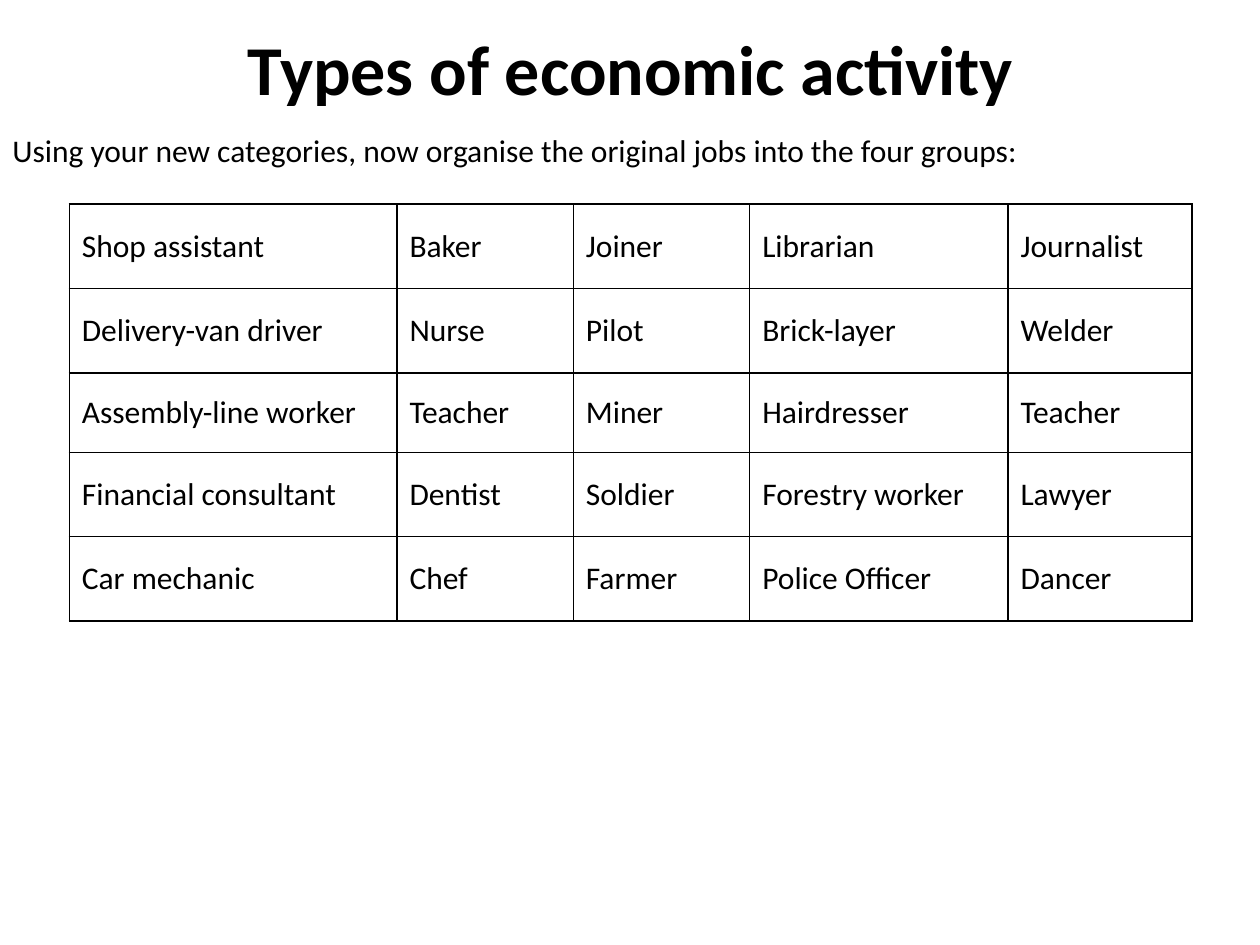
from dataclasses import dataclass

from lxml.etree import SubElement
from pptx import Presentation
from pptx.dml.color import RGBColor
from pptx.enum.text import MSO_ANCHOR, PP_ALIGN
from pptx.oxml.ns import qn
from pptx.util import Inches, Pt

FONT = "Calibri"
COLORS = {"page": "FFFFFF", "ink": "000000"}

WIDTHS = [2.6, 1.4, 1.4, 2.05, 1.46]
HEIGHTS = [0.67, 0.67, 0.63, 0.67, 0.67]
JOBS = [
    ["Shop assistant", "Baker", "Joiner", "Librarian", "Journalist"],
    ["Delivery-van driver", "Nurse", "Pilot", "Brick-layer", "Welder"],
    ["Assembly-line worker", "Teacher", "Miner", "Hairdresser", "Teacher"],
    ["Financial consultant", "Dentist", "Soldier", "Forestry worker", "Lawyer"],
    ["Car mechanic", "Chef", "Farmer", "Police Officer", "Dancer"],
]


@dataclass
class Label:
    text: str
    left: float
    top: float
    width: float
    height: float
    size: int = 18
    bold: bool = False
    align: PP_ALIGN = PP_ALIGN.LEFT
    anchor: MSO_ANCHOR = MSO_ANCHOR.TOP


LABELS = [
    Label("Types of economic activity", 0.2, 0.16, 9.61, 0.75, 40, True,
          PP_ALIGN.CENTER, MSO_ANCHOR.MIDDLE),
    Label("Using your new categories, now organise the original jobs "
          "into the four groups:", 0, 0.99, 10, 0.4),
]


def write(frame, text: str, size: int = 18, bold: bool = False) -> None:
    frame.text = text
    font = frame.paragraphs[0].font
    font.name, font.size, font.bold = FONT, Pt(size), bold
    font.color.rgb = RGBColor.from_string(COLORS["ink"])


def add_label(slide, label: Label) -> None:
    box = slide.shapes.add_textbox(Inches(label.left), Inches(label.top),
                                   Inches(label.width), Inches(label.height))
    frame = box.text_frame
    frame.word_wrap = True
    frame.vertical_anchor = label.anchor
    write(frame, label.text, label.size, label.bold)
    frame.paragraphs[0].alignment = label.align
    if label.bold:
        frame.margin_left = frame.margin_right = Inches(0.04)
        frame.margin_top = frame.margin_bottom = Inches(0.04)


def add_border(cell) -> None:
    props = cell._tc.get_or_add_tcPr()
    for side in ("a:lnL", "a:lnR", "a:lnT", "a:lnB"):
        line = SubElement(props, qn(side), w=str(Pt(1)))
        fill = SubElement(line, qn("a:solidFill"))
        SubElement(fill, qn("a:srgbClr"), val=COLORS["ink"])


def add_jobs(slide, left: float, top: float) -> None:
    table = slide.shapes.add_table(
        len(HEIGHTS), len(WIDTHS), Inches(left), Inches(top),
        Inches(sum(WIDTHS)), Inches(sum(HEIGHTS))).table
    table.first_row = table.horz_banding = False
    for col, width in zip(table.columns, WIDTHS):
        col.width = Inches(width)
    for row, height, names in zip(table.rows, HEIGHTS, JOBS):
        row.height = Inches(height)
        for cell, name in zip(row.cells, names):
            write(cell.text_frame, name)
            cell.vertical_anchor = MSO_ANCHOR.MIDDLE
            # Borders must stand before the fill in the cell's XML
            add_border(cell)
            cell.fill.background()


def main() -> None:
    deck = Presentation()
    deck.slide_width, deck.slide_height = Inches(10), Inches(7.5)
    slide = deck.slides.add_slide(deck.slide_layouts[6])
    back = slide.background.fill
    back.solid()
    back.fore_color.rgb = RGBColor.from_string(COLORS["page"])

    # Heading and task
    for label in LABELS:
        add_label(slide, label)

    # Grid of jobs
    add_jobs(slide, 0.55, 1.62)
    deck.save("out.pptx")


if __name__ == "__main__":
    main()
